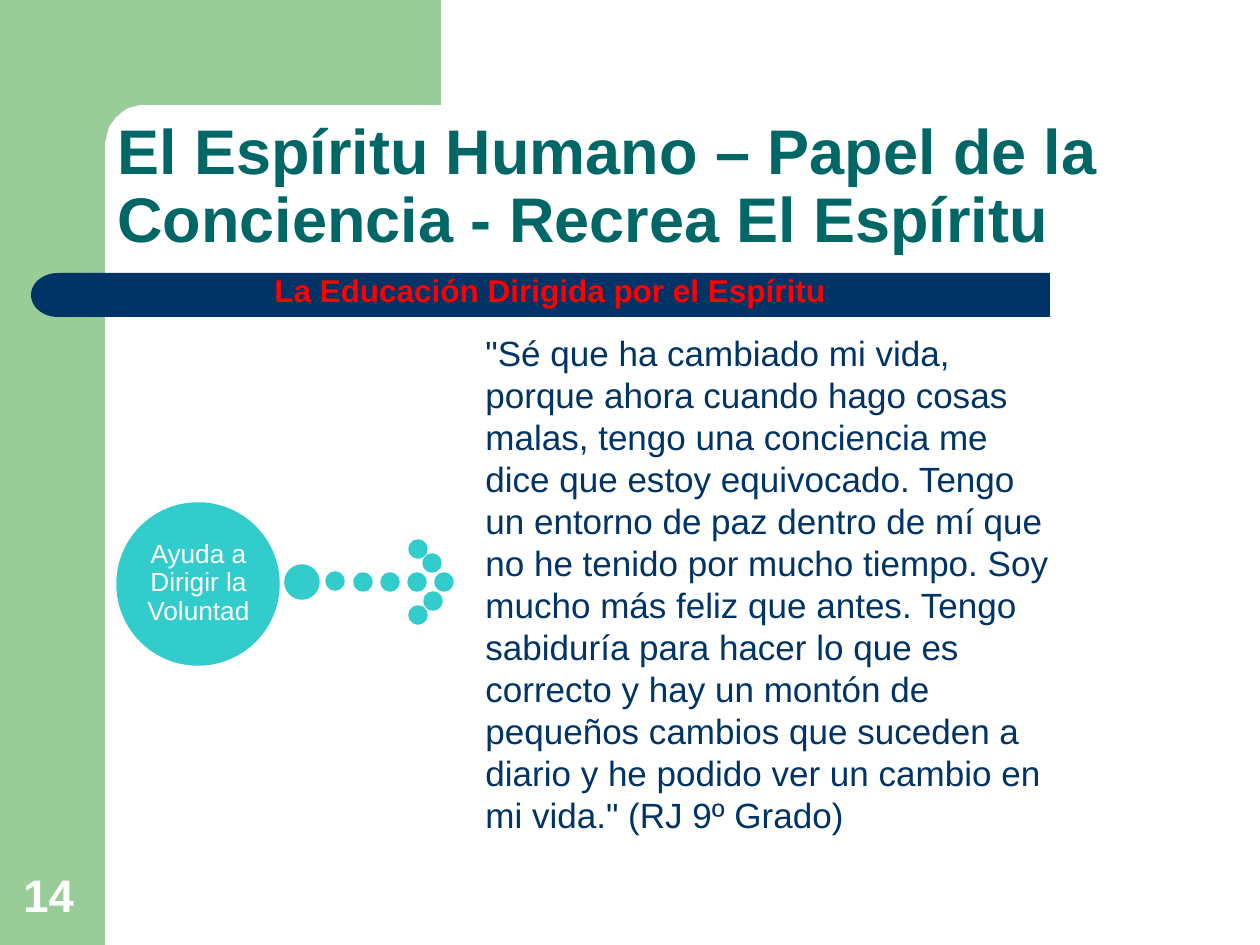
from math import cos, pi, sin

from pptx import Presentation
from pptx.dml.color import RGBColor
from pptx.enum.shapes import MSO_SHAPE as Shape
from pptx.enum.text import MSO_ANCHOR as Anchor, PP_ALIGN as Align
from pptx.util import Emu, Pt

GREEN = RGBColor(0x99, 0xCC, 0x99)
NAVY = RGBColor(0x00, 0x33, 0x66)
TEAL = RGBColor(0x00, 0x66, 0x66)
TURQUOISE = RGBColor(0x33, 0xCC, 0xCC)
RED = RGBColor(0xFF, 0x00, 0x00)
WHITE = RGBColor(0xFF, 0xFF, 0xFF)

TITLE = "El Espíritu Humano – Papel de la Conciencia - Recrea El Espíritu"
SUBTITLE = "La Educación Dirigida por el Espíritu"
ROLE = "Ayuda a Dirigir la Voluntad"
QUOTE = (
    "\"Sé que ha cambiado mi vida, porque ahora cuando hago cosas malas, tengo "
    "una conciencia me dice que estoy equivocado. Tengo un entorno de paz dentro "
    "de mí que no he tenido por mucho tiempo. Soy mucho más feliz que antes. "
    "Tengo sabiduría para hacer lo que es correcto y hay un montón de pequeños "
    "cambios que suceden a diario y he podido ver un cambio en mi vida.\" "
    "(RJ 9º Grado)"
)
PAGE_NUMBER = "14"

# Circles as centre x, centre y, diameter
SMALL = 16
CIRCLES = [
    (444, 582, SMALL), (417, 582, SMALL), (390, 582, SMALL), (363, 582, SMALL),
    (335, 581, SMALL), (302, 582, 32),                      # shaft
    (418, 549, SMALL), (418, 615, SMALL),                   # outer barbs
    (432, 563, SMALL), (433, 601, SMALL),                   # inner barbs
    (198, 584, 160),                                        # role
]

PX_PER_INCH = 126
SCALE = 914400 / PX_PER_INCH


def px(length):
    return Emu(round(length * SCALE))


def paint(shape, color, line_width=None):
    shape.shadow.inherit = False
    shape.fill.solid()
    shape.fill.fore_color.rgb = color
    if line_width:
        shape.line.color.rgb = color
        shape.line.width = Pt(line_width)
    else:
        shape.line.fill.background()
    return shape


def add_shape(page, kind, area, color, line_width=None):
    shape = page.shapes.add_shape(kind, *map(px, area))
    return paint(shape, color, line_width)


def add_text(page, text, area, size, color, bold=False, anchor=Anchor.TOP,
             align=Align.LEFT, spacing=None, wrap=True, inset=None):
    box = page.shapes.add_textbox(*map(px, area))
    frame = box.text_frame
    frame.word_wrap = wrap
    frame.vertical_anchor = anchor
    if inset is not None:
        frame.margin_left = frame.margin_right = px(inset)
        frame.margin_top = frame.margin_bottom = px(inset)
    para = frame.paragraphs[0]
    para.text = text
    para.alignment = align
    if spacing:
        para.line_spacing = spacing
    para.font.name = "Arial"
    para.font.size = Pt(size)
    para.font.bold = bold
    para.font.color.rgb = color


def add_corner(page):
    """Green block at the top with a rounded inner corner."""
    center_x, center_y, radius_x, radius_y, steps = 143, 147, 38, 42, 16
    angles = [pi / 2 * (1 + step / steps) for step in range(steps + 1)]
    curve = [(center_x + radius_x * cos(a), center_y - radius_y * sin(a))
             for a in angles]
    points = [(441, 105), *curve, (105, 161), (63, 161), (63, 0)]
    builder = page.shapes.build_freeform(441, 0, scale=SCALE)
    builder.add_line_segments(points, close=True)
    paint(builder.convert_to_shape(), GREEN)


def main():
    deck = Presentation()
    deck.slide_width, deck.slide_height = px(1260), px(945)
    page = deck.slides.add_slide(deck.slide_layouts[6])

    # Green frame
    add_shape(page, Shape.RECTANGLE, (0, 0, 105, 945), GREEN)
    add_corner(page)

    # Navy bar with a rounded left end
    add_shape(page, Shape.RECTANGLE, (84, 273, 966, 44), NAVY)
    cap = add_shape(page, Shape.FLOWCHART_DELAY, (31, 273, 54, 44), NAVY)
    cap._element.spPr.xfrm.set("flipH", "1")

    # Title
    add_text(page, TITLE, (105, 105, 1092, 157), 36, TEAL, bold=True,
             anchor=Anchor.BOTTOM, spacing=0.9)

    # Dotted arrow and role circle
    for x, y, size in CIRCLES:
        area = (x - size / 2, y - size / 2, size, size)
        add_shape(page, Shape.OVAL, area, TURQUOISE, line_width=2)
    add_text(page, ROLE, (142, 527, 113, 113), 15, WHITE, anchor=Anchor.MIDDLE,
             align=Align.CENTER, spacing=0.9, inset=2)

    # Quote, page number and subtitle
    add_text(page, QUOTE, (473, 325, 598, 522), 20, NAVY)
    add_text(page, PAGE_NUMBER, (11, 861, 81, 67), 26, WHITE, bold=True,
             anchor=Anchor.BOTTOM)
    add_text(page, SUBTITLE, (262, 265, 582, 50), 18, RED, bold=True, wrap=False)

    deck.save("out.pptx")


if __name__ == "__main__":
    main()
